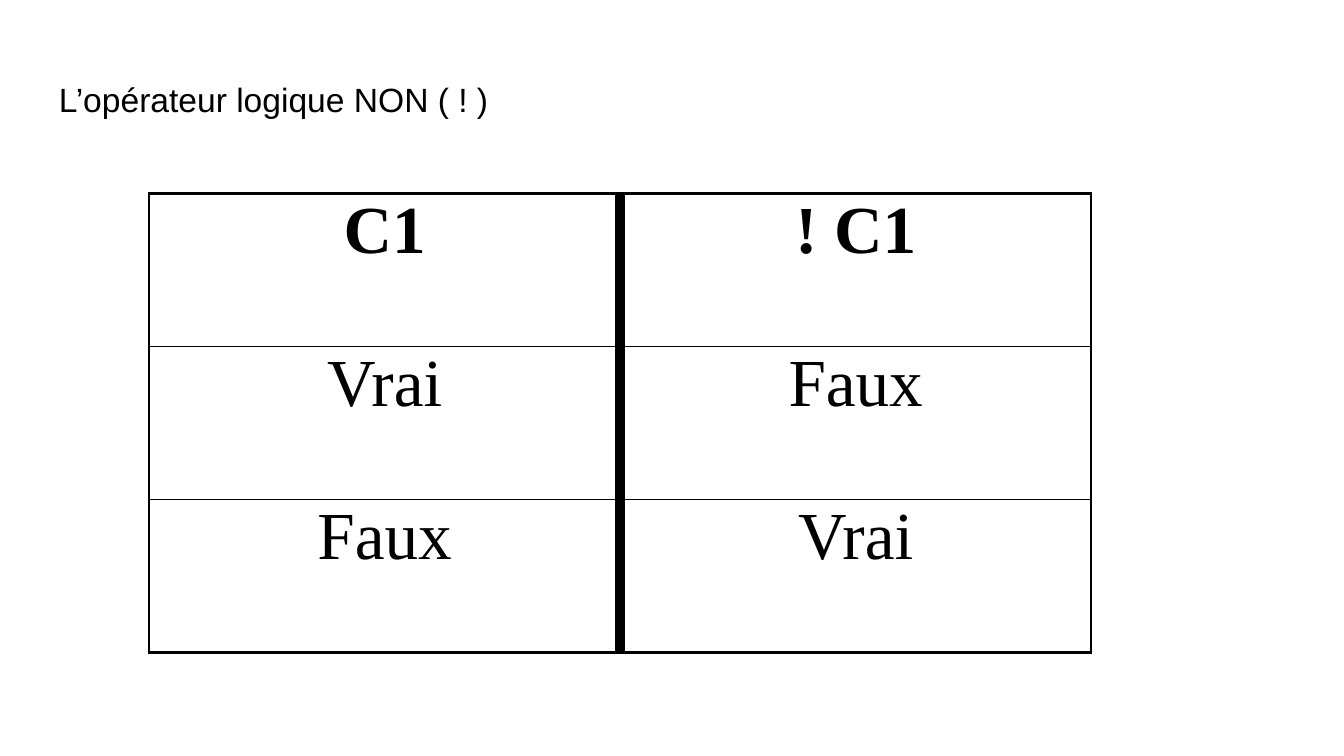
"""Build a slide with the truth table of the logical NOT operator."""
from dataclasses import dataclass

from lxml import etree
from pptx import Presentation
from pptx.dml.color import RGBColor
from pptx.enum.text import MSO_ANCHOR, PP_ALIGN
from pptx.oxml.ns import qn
from pptx.util import Pt

EMU_PER_PX = 4572
EMU_PER_POINT = 12700
BLANK_LAYOUT = 6
LEFT, CENTER = PP_ALIGN.LEFT, PP_ALIGN.CENTER
TOP = MSO_ANCHOR.TOP


@dataclass(frozen=True)
class Theme:
    ink: str = "000000"
    title_font: str = "Arial"
    table_font: str = "Times New Roman"
    title_size: int = 18
    table_size: int = 36
    outer_line: float = 1.5
    row_line: float = 1
    column_line: float = 6


@dataclass(frozen=True)
class Box:
    left: int
    top: int
    width: int
    height: int

    def emu(self) -> tuple[int, ...]:
        return tuple(px(n) for n in (self.left, self.top, self.width, self.height))


@dataclass(frozen=True)
class TruthRow:
    operand: str
    negation: str
    bold: bool = False


THEME = Theme()
TITLE_BOX = Box(68, 98, 1864, 126)
TABLE_BOX = Box(222, 288, 1402, 683)
TITLE = "L’opérateur logique NON ( ! )"
ROWS = (
    TruthRow("C1", "! C1", bold=True),
    TruthRow("Vrai", "Faux"),
    TruthRow("Faux", "Vrai"),
)


def px(length: int) -> int:
    return length * EMU_PER_PX


def style_paragraph(paragraph, font_name: str, size: int, align, bold: bool = False) -> None:
    paragraph.alignment = align
    font = paragraph.font
    font.name, font.size, font.bold = font_name, Pt(size), bold
    font.color.rgb = RGBColor.from_string(THEME.ink)


def add_title(slide, box: Box, text: str) -> None:
    shape = slide.shapes.add_textbox(*box.emu())
    frame = shape.text_frame
    frame.word_wrap = True
    frame.vertical_anchor = TOP
    frame.margin_left = frame.margin_right = px(20)
    frame.margin_top = frame.margin_bottom = px(20)
    frame.text = text
    style_paragraph(frame.paragraphs[0], THEME.title_font, THEME.title_size, LEFT)


def set_borders(cell, widths: dict[str, float]) -> None:
    properties = cell._tc.get_or_add_tcPr()
    for index, (side, width) in enumerate(widths.items()):
        line = etree.Element(qn(f"a:ln{side}"), w=str(int(width * EMU_PER_POINT)))
        fill = etree.SubElement(line, qn("a:solidFill"))
        etree.SubElement(fill, qn("a:srgbClr"), val=THEME.ink)
        properties.insert(index, line)


def fill_cell(cell, text: str, bold: bool) -> None:
    cell.fill.background()
    cell.vertical_anchor = TOP
    cell.margin_left = cell.margin_right = px(14)
    cell.margin_top = cell.margin_bottom = 0
    cell.text = text
    style_paragraph(cell.text_frame.paragraphs[0], THEME.table_font, THEME.table_size, CENTER, bold)


def add_truth_table(slide, box: Box, rows: tuple[TruthRow, ...]) -> None:
    table = slide.shapes.add_table(len(rows), 2, *box.emu()).table
    table.first_row = table.horz_banding = False
    last_row = len(rows) - 1
    for row_index, row in enumerate(rows):
        for column_index, text in enumerate((row.operand, row.negation)):
            cell = table.cell(row_index, column_index)
            fill_cell(cell, text, row.bold)
            set_borders(cell, {
                "L": THEME.column_line if column_index else THEME.outer_line,
                "R": THEME.outer_line if column_index else THEME.column_line,
                "T": THEME.row_line if row_index else THEME.outer_line,
                "B": THEME.outer_line if row_index == last_row else THEME.row_line,
            })


def main() -> None:
    presentation = Presentation()
    presentation.slide_width, presentation.slide_height = px(2000), px(1125)
    slide = presentation.slides.add_slide(presentation.slide_layouts[BLANK_LAYOUT])
    add_title(slide, TITLE_BOX, TITLE)
    add_truth_table(slide, TABLE_BOX, ROWS)
    presentation.save("out.pptx")


if __name__ == "__main__":
    main()
